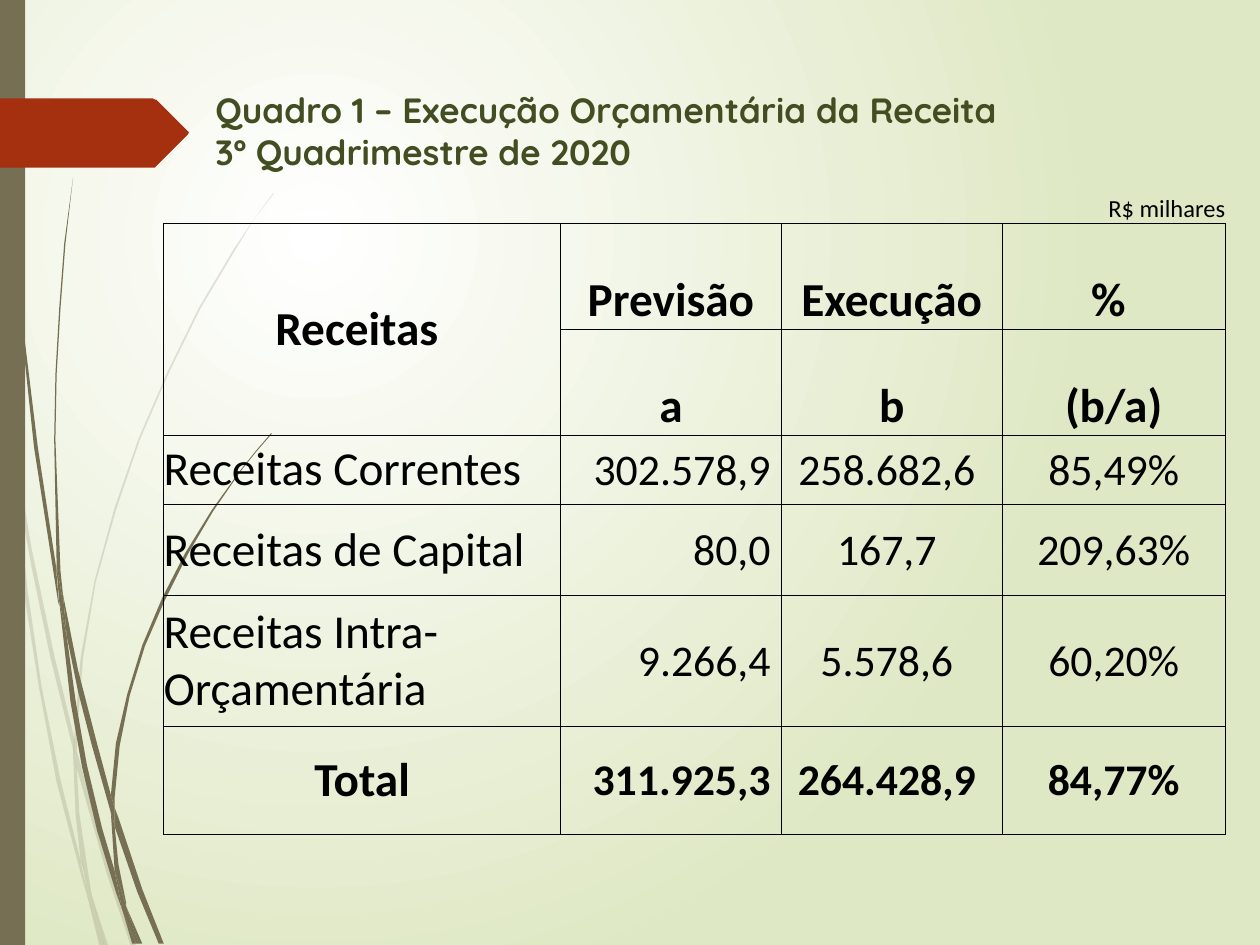
from dataclasses import dataclass

from lxml.etree import SubElement
from pptx import Presentation
from pptx.dml.color import RGBColor
from pptx.enum.shapes import MSO_SHAPE
from pptx.enum.text import MSO_ANCHOR as Anchor, MSO_AUTO_SIZE as AutoSize, PP_ALIGN as Align
from pptx.oxml.ns import qn
from pptx.util import Cm, Pt

BLACK = RGBColor(0x00, 0x00, 0x00)
WHITE = RGBColor(0xFF, 0xFF, 0xFF)
PALE_GREEN = RGBColor(0xDF, 0xE8, 0xC4)
OLIVE = RGBColor(0x76, 0x6F, 0x54)
DARK_GREEN = RGBColor(0x42, 0x4D, 0x22)
RED = RGBColor(0xA5, 0x30, 0x10)

OUTLINE_UNIT = Cm(0.0254)  # outline points are whole numbers of this unit
NO_STYLE_NO_GRID = "{2D5ABB26-0587-4C30-8999-92F81FD0307C}"
LEFT, CENTER, RIGHT = Align.LEFT, Align.CENTER, Align.RIGHT


@dataclass
class Outline:
    points: list[tuple[int, int]]
    color: RGBColor = OLIVE
    opacity: int = 100


@dataclass
class CellStyle:
    size: int
    align: Align
    bold: bool = False
    anchor: Anchor = Anchor.MIDDLE
    margin: float = 0


FAINT_BLADES = [
    [(8, 350), (6, 322), (0, 282), (0, 299), (7, 344)],
    [(40, 522), (59, 599), (59, 586), (43, 520), (25, 435), (10, 345), (12, 376), (25, 450)],
    [(64, 607), (61, 596), (61, 610), (85, 694), (104, 751), (108, 751), (88, 692)],
    [(83, 751), (86, 751), (73, 711)],
    [(64, 683), (48, 619), (33, 545), (22, 469), (12, 376), (8, 350), (12, 410), (19, 470),
     (31, 546), (45, 621), (64, 693), (70, 714), (69, 707)],
    [(58, 599), (60, 646), (64, 683), (67, 692), (73, 711), (72, 706), (63, 646), (61, 610),
     (61, 608)],
    [(61, 584), (66, 522), (76, 462), (92, 405), (111, 349), (134, 296), (159, 245), (187, 198),
     (201, 175), (217, 154), (217, 153), (201, 175), (186, 197), (158, 244), (133, 295),
     (110, 348), (91, 403), (75, 461), (64, 522), (59, 584), (59, 586), (61, 596)],
    [(70, 714), (79, 751), (82, 751)],
    [(61, 608), (61, 610), (61, 596), (59, 586), (58, 599)],
    [(67, 692), (65, 683), (69, 707), (70, 714), (82, 751), (83, 751), (73, 711)],
]
SOLID_BLADES = [
    [(5, 110), (14, 233), (27, 355), (46, 477), (47, 481), (45, 457), (45, 453), (30, 355),
     (15, 232), (6, 109), (4, 48), (3, 0), (2, 0), (3, 48)],
    [(73, 592), (88, 645), (88, 633), (88, 631), (77, 590), (62, 532), (50, 472), (53, 505),
     (62, 549)],
    [(94, 649), (91, 641), (91, 656), (109, 708), (126, 749), (130, 749), (113, 706)],
    [(91, 691), (81, 657), (69, 607), (60, 556), (53, 505), (47, 477), (56, 557), (65, 608),
     (77, 659), (92, 708), (97, 722), (96, 717)],
    [(50, 472), (48, 453), (44, 349), (45, 297), (48, 245), (52, 193), (58, 141), (51, 193),
     (47, 245), (44, 297), (43, 349), (45, 449), (49, 472)],
    [(110, 749), (113, 749), (100, 719)],
    [(47, 477), (53, 505), (50, 472), (49, 472), (45, 449), (45, 453)],
    [(91, 633), (95, 592), (103, 552), (115, 513), (131, 476), (149, 440), (169, 406), (191, 374),
     (203, 359), (216, 344), (215, 344), (203, 358), (191, 373), (168, 405), (147, 439),
     (129, 474), (113, 512), (101, 551), (92, 590), (88, 631), (91, 641)],
    [(97, 722), (105, 749), (108, 749)],
    [(88, 645), (91, 691), (96, 706), (100, 719), (100, 716), (94, 686), (91, 656), (90, 651)],
    [(88, 645), (90, 651), (91, 656), (91, 641), (88, 631), (88, 633)],
    [(96, 706), (91, 691), (96, 717), (97, 722), (108, 749), (110, 749), (100, 719)],
]
ARROW_TAG = [(149, 107), (124, 132), (123, 133), (121, 133), (0, 133), (0, 78), (121, 78),
             (123, 79), (124, 79), (149, 104), (150, 105)]

COLUMN_WIDTHS = [8.0, 4.45, 4.45, 4.5]
ROW_HEIGHTS = [1.28, 2.13, 2.13, 1.4, 1.83, 2.64, 2.18]
REVENUE = [
    ("", "", "", "R$ milhares"),
    ("Receitas ", "Previsão", "Execução", "% "),
    ("", "a", "b", "(b/a)"),
    ("Receitas Correntes", "302.578,9 ", "258.682,6 ", "85,49%"),
    ("Receitas de Capital", "80,0 ", "167,7 ", "209,63%"),
    ("Receitas Intra-Orçamentária", "9.266,4 ", "5.578,6 ", "60,20%"),
    ("Total", "311.925,3 ", "264.428,9 ", "84,77%"),
]


def paint_background(slide) -> None:
    """Radial gradient, white around the upper left quarter."""
    fill = slide.background.fill
    fill.gradient()
    for stop, color, position in zip(fill.gradient_stops, (WHITE, PALE_GREEN), (0, 1)):
        stop.color.rgb = color
        stop.position = position
    gradient = slide.element.find(".//" + qn("a:gradFill"))
    gradient.remove(gradient.find(qn("a:lin")))
    circle = SubElement(gradient, qn("a:path"), path="circle")
    SubElement(circle, qn("a:fillToRect"), l="50000", t="50000", r="100000", b="100000")


def paint(shape, color: RGBColor, opacity: int = 100) -> None:
    shape.shadow.inherit = False
    shape.fill.solid()
    shape.fill.fore_color.rgb = color
    shape.line.fill.background()
    if opacity < 100:
        rgb = shape.fill._xPr.find(".//" + qn("a:srgbClr"))
        SubElement(rgb, qn("a:alpha"), val=str(opacity * 1000))


def draw_outline(slide, outline: Outline) -> None:
    start, *others = outline.points
    builder = slide.shapes.build_freeform(*start, scale=OUTLINE_UNIT)
    builder.add_line_segments(others, close=True)
    paint(builder.convert_to_shape(), outline.color, outline.opacity)


def write_title(title) -> None:
    title.left, title.top, title.width, title.height = Cm(4.09), Cm(1.65), Cm(21.59), Cm(1.47)
    frame = title.text_frame
    frame.text = "Quadro 1 – Execução Orçamentária da Receita\v3º Quadrimestre de 2020"
    frame.auto_size = AutoSize.NONE
    frame.vertical_anchor = Anchor.TOP
    heading = frame.paragraphs[0]
    heading.alignment = LEFT
    for run in heading.runs:
        run.font.name, run.font.size, run.font.bold = "Quicksand", Pt(20), True
        run.font.color.rgb = DARK_GREEN


def cell_style(row: int, column: int) -> CellStyle:
    total = row == len(REVENUE) - 1
    if row == 0:
        return CellStyle(14, RIGHT, anchor=Anchor.BOTTOM)
    if row <= 2:
        return CellStyle(27, CENTER, True, Anchor.BOTTOM if column else Anchor.MIDDLE)
    if column == 0:
        return CellStyle(27, CENTER if total else LEFT, total)
    return CellStyle(25, RIGHT if column == 1 else CENTER, total, margin=0.02)


def set_borders(cell, sides: str) -> None:
    properties = cell._tc.get_or_add_tcPr()
    for index, side in enumerate(sides):
        line = properties.makeelement(qn(f"a:ln{side}"), {"w": str(Pt(0.5))})
        fill = SubElement(line, qn("a:solidFill"))
        SubElement(fill, qn("a:srgbClr"), val=str(BLACK))
        properties.insert(index, line)


def write_cell(cell, text: str, style: CellStyle) -> None:
    cell.margin_left = cell.margin_right = cell.margin_top = Cm(style.margin)
    cell.margin_bottom = 0
    cell.vertical_anchor = style.anchor
    cell.fill.background()
    cell.text_frame.text = text
    paragraph = cell.text_frame.paragraphs[0]
    paragraph.alignment = style.align
    for run in paragraph.runs:
        run.font.name, run.font.size, run.font.bold = "Calibri", Pt(style.size), style.bold
        run.font.color.rgb = BLACK


def add_revenue_table(slide) -> None:
    table = slide.shapes.add_table(len(ROW_HEIGHTS), len(COLUMN_WIDTHS), Cm(3.3), Cm(3.23),
                                   Cm(sum(COLUMN_WIDTHS)), Cm(sum(ROW_HEIGHTS))).table
    table.first_row = table.horz_banding = False
    table._tbl.tblPr.find(qn("a:tableStyleId")).text = NO_STYLE_NO_GRID
    for column, width in zip(table.columns, COLUMN_WIDTHS):
        column.width = Cm(width)
    for row, (height, texts) in enumerate(zip(ROW_HEIGHTS, REVENUE)):
        table.rows[row].height = Cm(height)
        for column, text in enumerate(texts):
            cell = table.cell(row, column)
            write_cell(cell, text, cell_style(row, column))
            set_borders(cell, "LRTB" if row else "B")
    table.cell(1, 0).merge(table.cell(2, 0))


def main() -> None:
    deck = Presentation()
    deck.slide_width, deck.slide_height = Cm(25.4), Cm(19.05)
    slide = deck.slides.add_slide(deck.slide_layouts[5])
    paint_background(slide)
    for blade in FAINT_BLADES:
        draw_outline(slide, Outline(blade, opacity=20))
    for blade in SOLID_BLADES:
        draw_outline(slide, Outline(blade))
    side_bar = slide.shapes.add_shape(MSO_SHAPE.RECTANGLE, 0, 0, Cm(0.51), deck.slide_height)
    paint(side_bar, OLIVE)
    draw_outline(slide, Outline(ARROW_TAG, RED))
    write_title(slide.shapes.title)
    add_revenue_table(slide)
    deck.save("out.pptx")


if __name__ == "__main__":
    main()
